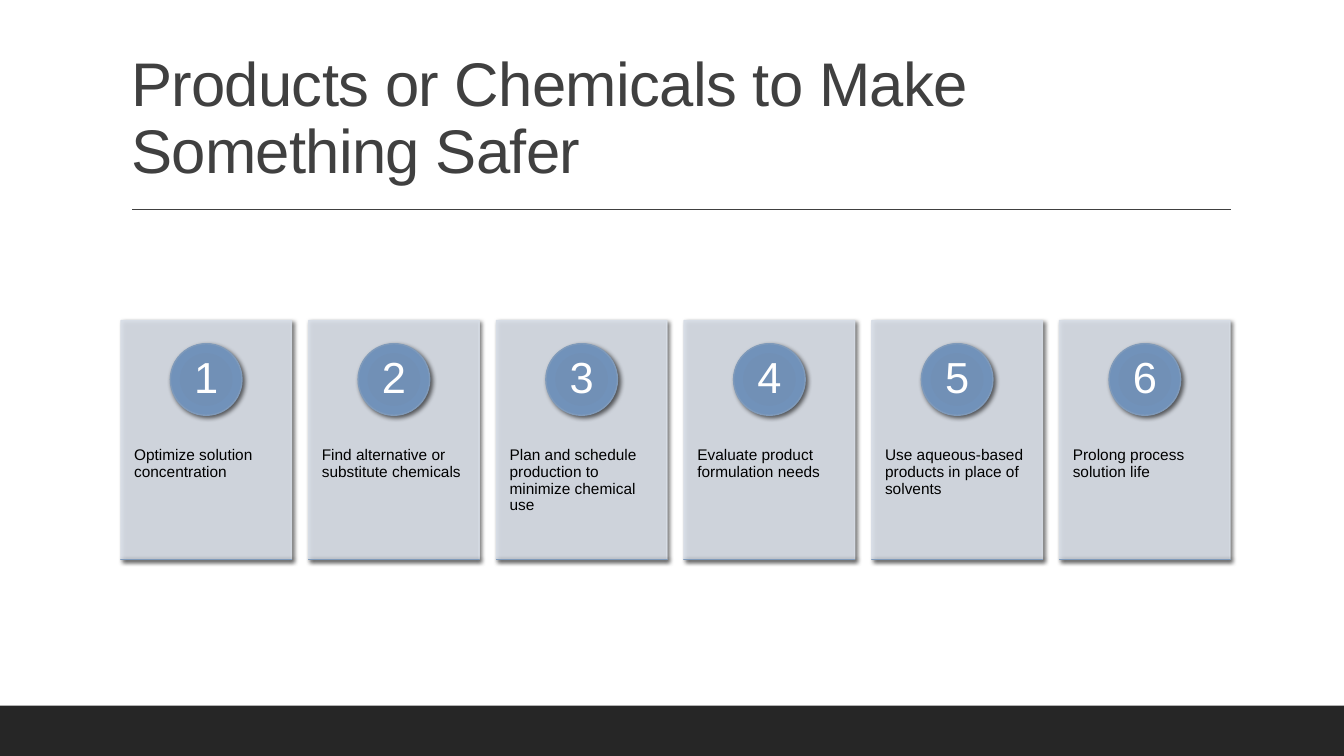
from dataclasses import dataclass

from lxml.etree import SubElement
from pptx import Presentation
from pptx.dml.color import RGBColor as Color
from pptx.enum.shapes import MSO_CONNECTOR as Connector, MSO_SHAPE as Shape
from pptx.enum.text import MSO_ANCHOR as Anchor, MSO_AUTO_SIZE as Fit, PP_ALIGN as Align
from pptx.oxml import parse_xml
from pptx.oxml.ns import nsdecls, qn
from pptx.util import Inches, Pt


@dataclass(frozen=True)
class Theme:
    font: str = "Arial"
    title_size: float = 44
    number_size: float = 31
    body_size: float = 11
    ink: str = "404040"
    body: str = "000000"
    number: str = "FFFFFF"
    footer: str = "262626"
    card: str = "D8DEE7"
    accent_line: str = "7F9ABA"
    accent_stops: tuple = ((0, "6E8FB6"), (34, "7190B6"), (70, "7192BA"), (100, "7C9ABD"))


THEME = Theme()
WIDTH, HEIGHT = 13.33, 7.5
TITLE = "Products or Chemicals to Make Something Safer"
STEPS = (
    "Optimize solution concentration",
    "Find alternative or substitute chemicals",
    "Plan and schedule production to minimize chemical use",
    "Evaluate product formulation needs",
    "Use aqueous-based products in place of solvents",
    "Prolong process solution life",
)

# Card grid, in inches
LEFT, ROW_WIDTH = 1.2, 11
CARD_TOP, CARD_WIDTH, CARD_HEIGHT = 3.18, 1.69, 2.37
PITCH = (ROW_WIDTH - CARD_WIDTH) / (len(STEPS) - 1)
CIRCLE_TOP, CIRCLE, NUMBER_BOX = 3.41, 0.71, 0.5
TEXT_TOP, TEXT_HEIGHT = 4.08, 1.42


def inches(*lengths):
    return [Inches(length) for length in lengths]


def apply_format(target, values):
    for name, value in values.items():
        setattr(target, name, value)


def write_text(box, text, size, color, anchor=Anchor.TOP, align=Align.LEFT,
               margins=(0.1, 0.05), space_after=0):
    frame = box.text_frame
    side, end = inches(*margins)
    apply_format(frame, {
        "word_wrap": True, "auto_size": Fit.NONE, "vertical_anchor": anchor,
        "margin_left": side, "margin_right": side, "margin_top": end, "margin_bottom": end,
    })
    para = frame.paragraphs[0]
    apply_format(para, {"alignment": align, "line_spacing": 0.9, "space_after": Pt(space_after)})
    span = para.add_run()
    span.text = text
    apply_format(span.font, {"name": THEME.font, "size": Pt(size)})
    span.font.color.rgb = Color.from_string(color)
    return span


def add_solid(shapes, kind, area, fill, line=None):
    shape = shapes.add_shape(kind, *inches(*area))
    shape.shadow.inherit = False
    shape.fill.solid()
    shape.fill.fore_color.rgb = Color.from_string(fill)
    if line:
        shape.line.color.rgb = Color.from_string(line)
        shape.line.width = Pt(1)
    else:
        shape.line.fill.background()
    return shape


def add_shadow(shape, blur, distance):
    effects = shape._element.spPr.find(qn("a:effectLst"))
    shadow = SubElement(effects, qn("a:outerShdw"), blurRad=str(Pt(blur)),
                        dist=str(Pt(distance)), dir="2700000", rotWithShape="0")
    black = SubElement(shadow, qn("a:srgbClr"), val="000000")
    SubElement(black, qn("a:alpha"), val="60000")


def add_card_panel(shapes, area):
    panel = add_solid(shapes, Shape.RECTANGLE, area, THEME.card, THEME.card)
    for color in panel._element.spPr.iter(qn("a:srgbClr")):
        SubElement(color, qn("a:alpha"), val="90000")
    add_shadow(panel, 3, 2)


def add_accent(shapes, kind, area):
    accent = add_solid(shapes, kind, area, THEME.card, THEME.accent_line)
    stops = "".join(f'<a:gs pos="{share * 1000}"><a:srgbClr val="{color}"/></a:gs>'
                    for share, color in THEME.accent_stops)
    gradient = parse_xml(
        f'<a:gradFill {nsdecls("a")} rotWithShape="1"><a:gsLst>{stops}</a:gsLst>'
        '<a:path path="circle"><a:fillToRect l="100000" t="100000" r="100000" b="100000"/>'
        '</a:path></a:gradFill>')
    properties = accent._element.spPr
    properties.replace(properties.find(qn("a:solidFill")), gradient)
    add_shadow(accent, 3.5, 2)


def add_card(shapes, index, text):
    left = LEFT + index * PITCH
    add_card_panel(shapes, (left, CARD_TOP, CARD_WIDTH, CARD_HEIGHT))
    # Step description
    box = shapes.add_textbox(*inches(left, TEXT_TOP, CARD_WIDTH, TEXT_HEIGHT))
    write_text(box, text, THEME.body_size, THEME.body, margins=(0.13, 0.36), space_after=4)
    # Numbered circle
    circle_left = left + (CARD_WIDTH - CIRCLE) / 2
    add_accent(shapes, Shape.OVAL, (circle_left, CIRCLE_TOP, CIRCLE, CIRCLE))
    inset = (CIRCLE - NUMBER_BOX) / 2
    box = shapes.add_textbox(*inches(circle_left + inset, CIRCLE_TOP + inset,
                                     NUMBER_BOX, NUMBER_BOX))
    write_text(box, str(index + 1), THEME.number_size, THEME.number, Anchor.MIDDLE,
               Align.CENTER, (0.06, 0.01), space_after=11)
    # Bottom edge
    add_accent(shapes, Shape.RECTANGLE, (left, CARD_TOP + CARD_HEIGHT, CARD_WIDTH, 0))


def add_title(page):
    title = page.shapes.title
    names = ("left", "top", "width", "height")
    apply_format(title, dict(zip(names, inches(LEFT, 0.31, ROW_WIDTH, 1.59))))
    span = write_text(title, TITLE, THEME.title_size, THEME.ink, Anchor.BOTTOM)
    span.font._element.set("spc", "-50")


def add_rule(page):
    rule = page.shapes.add_connector(Connector.STRAIGHT, *inches(1.31, 2.08, 12.21, 2.08))
    rule.line.color.rgb = Color.from_string(THEME.ink)
    rule.line.width = Pt(1)
    SubElement(rule._element.spPr, qn("a:effectLst"))


def main():
    deck = Presentation()
    deck.slide_width, deck.slide_height = inches(WIDTH, HEIGHT)
    page = deck.slides.add_slide(deck.slide_layouts[5])
    # Frame of the slide
    add_solid(page.shapes, Shape.RECTANGLE, (0, HEIGHT - 0.5, WIDTH, 0.5), THEME.footer)
    add_rule(page)
    add_title(page)
    # Row of numbered cards
    cards = page.shapes.add_group_shape()
    for index, text in enumerate(STEPS):
        add_card(cards.shapes, index, text)
    deck.save("out.pptx")


if __name__ == "__main__":
    main()
